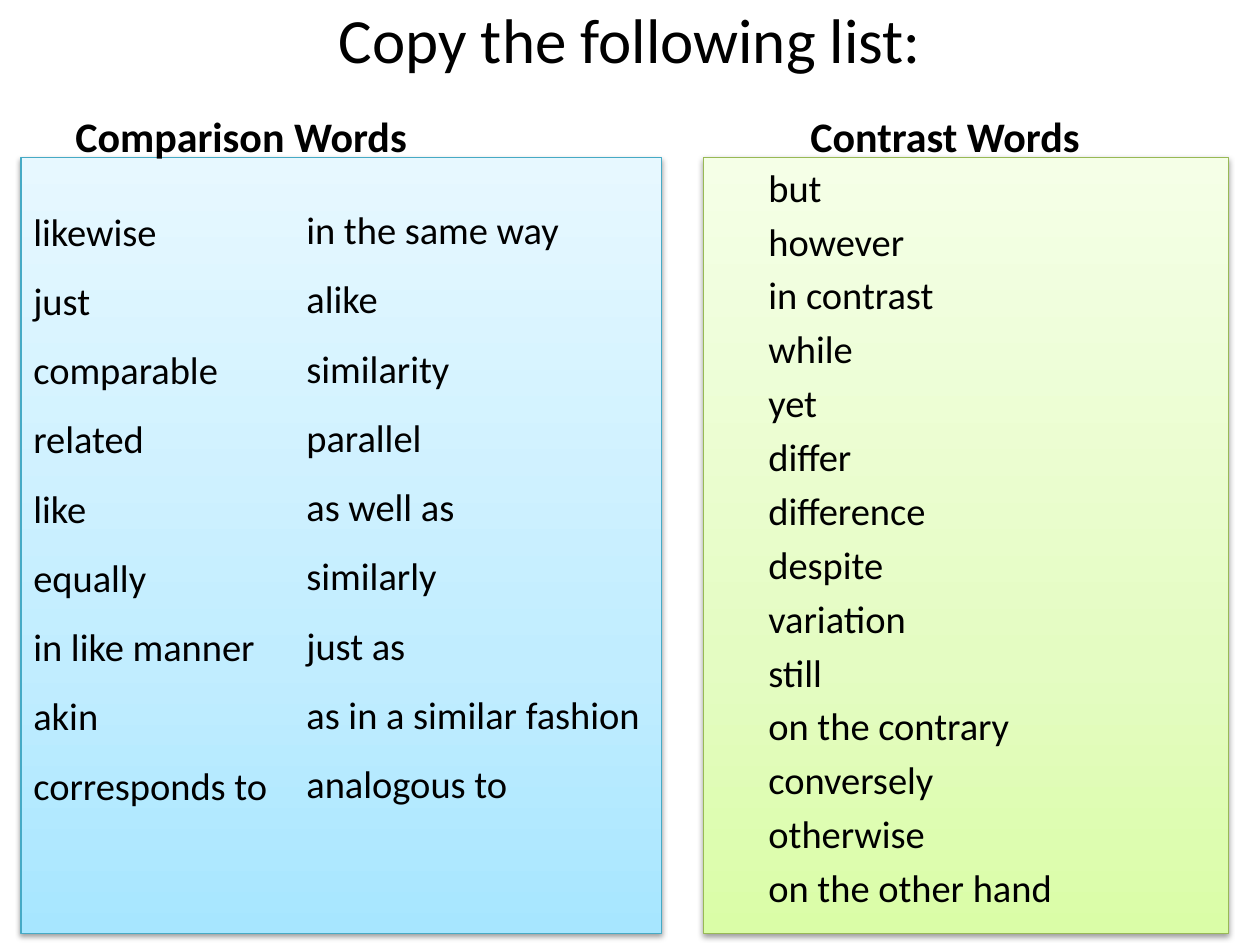
from copy import deepcopy

from lxml.etree import SubElement
from pptx import Presentation
from pptx.dml.color import RGBColor
from pptx.enum.shapes import MSO_SHAPE
from pptx.enum.text import MSO_ANCHOR, PP_ALIGN
from pptx.oxml.ns import qn
from pptx.util import Pt

# Content
TITLE = "Copy the following list:"
COMPARISON_HEADING = "Comparison Words"
CONTRAST_HEADING = "Contrast Words"
COMPARISON_LEFT = ["likewise", "just", "comparable", "related", "like", "equally",
                   "in like manner", "akin", "corresponds to"]
COMPARISON_RIGHT = ["in the same way", "alike", "similarity", "parallel", "as well as",
                    "similarly", "just as", "as in a similar fashion", "analogous to"]
CONTRAST = ["but", "however", "in contrast", "while", "yet", "differ", "difference",
            "despite", "variation", "still", "on the contrary", "conversely",
            "otherwise", "on the other hand"]

# Formats: frame, paragraph and font values of each kind of text
FORMATS = {
    "title": ({"vertical_anchor": MSO_ANCHOR.MIDDLE},
              {"alignment": PP_ALIGN.CENTER}, {"size": Pt(36)}),
    "heading": ({"vertical_anchor": MSO_ANCHOR.BOTTOM},
                {"space_before": Pt(4.8)}, {"size": Pt(24), "bold": True}),
    "wide list": ({}, {"line_spacing": 1.5}, {"size": Pt(22)}),
    "tight list": ({}, {"space_before": Pt(4.4)}, {"size": Pt(22)}),
}

# Panels: left, width, line colour, gradient colours from bottom to top
PANEL_TOP, PANEL_HEIGHT = 90, 443.5
PANELS = [
    (402, 300, "98B955", ["DAFDA7", "E4FCC2", "F5FFE7"]),
    (12, 366, "46AAC5", ["A7E6FF", "C1EDFF", "E7F8FF"]),
]
STOP_POSITIONS = [0, 0.35, 1]

# Texts: format, box (left, top, width, height), lines
HEADING_TOP, HEADING_WIDTH, HEADING_HEIGHT = 45, 318, 50.5
TEXTS = [
    ("title", (36, -6, 648, 56), [TITLE]),
    ("heading", (36, HEADING_TOP, HEADING_WIDTH, HEADING_HEIGHT), [COMPARISON_HEADING]),
    ("wide list", (12, 102, 180, 408), COMPARISON_LEFT),
    ("heading", (456, HEADING_TOP, HEADING_WIDTH, HEADING_HEIGHT), [CONTRAST_HEADING]),
    ("tight list", (432, PANEL_TOP, 348, 414), CONTRAST),
    ("wide list", (168, 101, 210, 367), COMPARISON_RIGHT),
]


def color(hex_code):
    return RGBColor.from_string(hex_code)


def apply(target, values):
    for name, value in values.items():
        setattr(target, name, value)


def add_shadow(panel):
    panel.shadow.inherit = False
    effects = panel.element.spPr.find(qn("a:effectLst"))
    outer = SubElement(effects, qn("a:outerShdw"), blurRad=str(Pt(3.1)),
                       dist=str(Pt(1.6)), dir="5400000", rotWithShape="0")
    black = SubElement(outer, qn("a:srgbClr"), val="000000")
    SubElement(black, qn("a:alpha"), val="38000")


def add_panel(slide, left, width, line_color, stop_colors):
    panel = slide.shapes.add_shape(MSO_SHAPE.RECTANGLE, Pt(left), Pt(PANEL_TOP),
                                   Pt(width), Pt(PANEL_HEIGHT))
    panel.fill.gradient()
    panel.fill.gradient_angle = 90
    # A new gradient has two stops; add the third
    stop_list = panel.element.spPr.find(".//" + qn("a:gsLst"))
    stop_list.append(deepcopy(stop_list[-1]))
    for stop, position, stop_color in zip(panel.fill.gradient_stops,
                                          STOP_POSITIONS, stop_colors):
        stop.position = position
        stop.color.rgb = color(stop_color)
    panel.line.color.rgb = color(line_color)
    panel.line.width = Pt(0.75)
    add_shadow(panel)


def add_text(slide, kind, box, lines):
    frame_values, paragraph_values, font_values = FORMATS[kind]
    frame = slide.shapes.add_textbox(*map(Pt, box)).text_frame
    apply(frame, {"word_wrap": True, **frame_values})
    frame.text = "\n".join(lines)
    for paragraph in frame.paragraphs:
        apply(paragraph, paragraph_values)
        font = paragraph.runs[0].font
        apply(font, {"name": "Calibri", **font_values})
        font.color.rgb = color("000000")


def main():
    deck = Presentation()
    deck.slide_width, deck.slide_height = Pt(720), Pt(540)
    slide = deck.slides.add_slide(deck.slide_layouts[6])
    for panel in PANELS:
        add_panel(slide, *panel)
    for text in TEXTS:
        add_text(slide, *text)
    deck.save("out.pptx")


if __name__ == "__main__":
    main()
